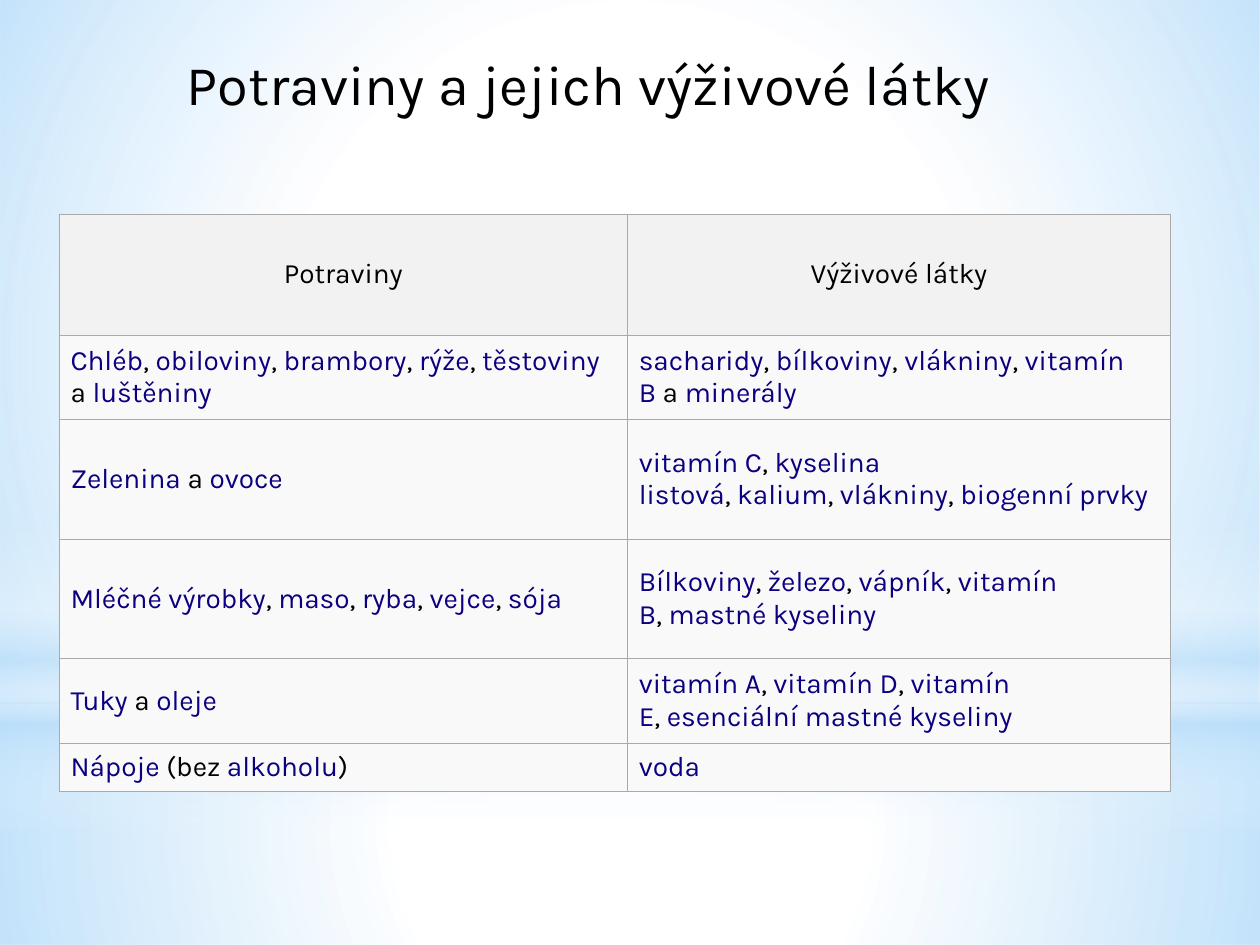
import pptx
import pptx.util
import pptx.oxml
import pptx.oxml.ns
import pptx.dml.color
import pptx.enum.shapes
import pptx.enum.text

HUE = {"ink": "000000", "link": "0B0080", "head": "F2F2F2", "body": "F9F9F9",
       "edge": "AAAAAA", "white": "FFFFFF", "sky": "B4DCFA"}
FONT = "Karla"
NS = pptx.oxml.ns.nsdecls("a")
KIND = pptx.enum.shapes.MSO_SHAPE
TEXT = pptx.enum.text

deck = pptx.Presentation()
deck.slide_width = pptx.util.Inches(10)
deck.slide_height = pptx.util.Inches(7.5)
unit = deck.slide_width / 100  # the slide is a grid of 100 columns by 75 rows
slide = deck.slides.add_slide(deck.slide_layouts[5])


def place(item, box):
    for name, size in zip(("left", "top", "width", "height"), box):
        setattr(item, name, round(size * unit))


def write(para, text, size, hue):
    run = para.add_run()
    run.text = text
    form = {"name": FONT, "size": pptx.util.Pt(size), "bold": False}
    for name, value in form.items():
        setattr(run.font, name, value)
    run.font.color.rgb = pptx.dml.color.RGBColor.from_string(HUE[hue])


# Backdrop: stops are position, colour, opacity in percent
ROUND = ('<a:path path="circle"><a:fillToRect l="50000" t="50000" '
         'r="50000" b="50000"/></a:path>')
DOWN = '<a:lin ang="5400000" scaled="0"/>'
glows = [
    (KIND.RECTANGLE, (0, 55.8, 100, 19.2), ROUND,
     [(0, "white", 91), (37, "white", 76), (100, "sky", 79)]),
    (KIND.RECTANGLE, (0, 0, 100, 55.8), ROUND,
     [(0, "white", 89), (48, "white", 62), (100, "sky", 79)]),
    (KIND.RECTANGLE, (0, 41.2, 100, 25), DOWN,
     [(0, "white", 0), (29, "white", 30), (45, "sky", 40),
      (55, "white", 26), (65, "sky", 60), (100, "white", 0)]),
    (KIND.OVAL, (0, 17.5, 100, 55.8), ROUND,
     [(0, "white", 100), (56, "white", 0)]),
]
for kind, box, way, stops in glows:
    glow = slide.shapes.add_shape(kind, 0, 0, 0, 0)
    place(glow, box)
    glow.shadow.inherit = False
    glow.line.fill.background()
    marks = "".join(
        f'<a:gs pos="{pos * 1000}"><a:srgbClr val="{HUE[hue]}">'
        f'<a:alpha val="{show * 1000}"/></a:srgbClr></a:gs>'
        for pos, hue, show in stops)
    fill = pptx.oxml.parse_xml(
        f'<a:gradFill {NS} rotWithShape="1"><a:gsLst>{marks}</a:gsLst>{way}</a:gradFill>')
    glow.element.spPr.find(pptx.oxml.ns.qn("a:prstGeom")).addnext(fill)

# Title, brought in front of the backdrop
title = slide.shapes.title
title.element.getparent().append(title.element)
place(title, (13.8, 3.4, 70.1, 6.4))
form = {"word_wrap": True, "auto_size": TEXT.MSO_AUTO_SIZE.NONE,
        "vertical_anchor": TEXT.MSO_ANCHOR.TOP}
for name, value in form.items():
    setattr(title.text_frame, name, value)
para = title.text_frame.paragraphs[0]
para.alignment = TEXT.PP_ALIGN.LEFT
write(para, "Potraviny a jejich výživové látky", 32, "ink")

# Table: bars split each cell into link and plain parts, by turns
rows = [
    (9.6, "|Potraviny", "|Výživové látky"),
    (6.7, "Chléb|, |obiloviny|, |brambory|, |rýže|, |těstoviny| a |luštěniny",
     "sacharidy|, |bílkoviny|, |vlákniny|, |vitamín B| a |minerály"),
    (9.5, "Zelenina| a |ovoce",
     "vitamín C|, |kyselina listová|, |kalium|, |vlákniny|, |biogenní prvky"),
    (9.5, "Mléčné výrobky|, |maso|, |ryba|, |vejce|, |sója",
     "Bílkoviny|, |železo|, |vápník|, |vitamín B|, |mastné kyseliny"),
    (6.7, "Tuky| a |oleje",
     "vitamín A|, |vitamín D|, |vitamín E|, |esenciální mastné kyseliny"),
    (3.8, "Nápoje| (bez |alkoholu|)", "voda"),
]
frame = slide.shapes.add_table(len(rows), 2, 0, 0, 0, 0)
place(frame, (4.7, 17, 88.2, 45.9))
table = frame.table
for col, wide in zip(table.columns, (45.1, 43.1)):
    col.width = round(wide * unit)

pad = {"margin_left": 0.09, "margin_right": 0.09,
       "margin_top": 0.05, "margin_bottom": 0.05}
for r, (high, *texts) in enumerate(rows):
    table.rows[r].height = round(high * unit)
    for c, text in enumerate(texts):
        cell = table.cell(r, c)
        for name, value in pad.items():
            setattr(cell, name, pptx.util.Inches(value))
        cell.vertical_anchor = TEXT.MSO_ANCHOR.MIDDLE
        cell.fill.solid()
        tint = HUE["body" if r else "head"]
        cell.fill.fore_color.rgb = pptx.dml.color.RGBColor.from_string(tint)
        # Borders come before the fill
        for i, side in enumerate("LRTB"):
            cell.fill._xPr.insert(i, pptx.oxml.parse_xml(
                f'<a:ln{side} {NS} w="9525"><a:solidFill>'
                f'<a:srgbClr val="{HUE["edge"]}"/></a:solidFill></a:ln{side}>'))
        para = cell.text_frame.paragraphs[0]
        para.alignment = TEXT.PP_ALIGN.LEFT if r else TEXT.PP_ALIGN.CENTER
        for i, part in enumerate(text.split("|")):
            if not part:
                continue
            if i % 2 and r:
                part = part.replace(" ", chr(160))  # plain parts do not break
            write(para, part, 16, "ink" if i % 2 else "link")

deck.save("out.pptx")
